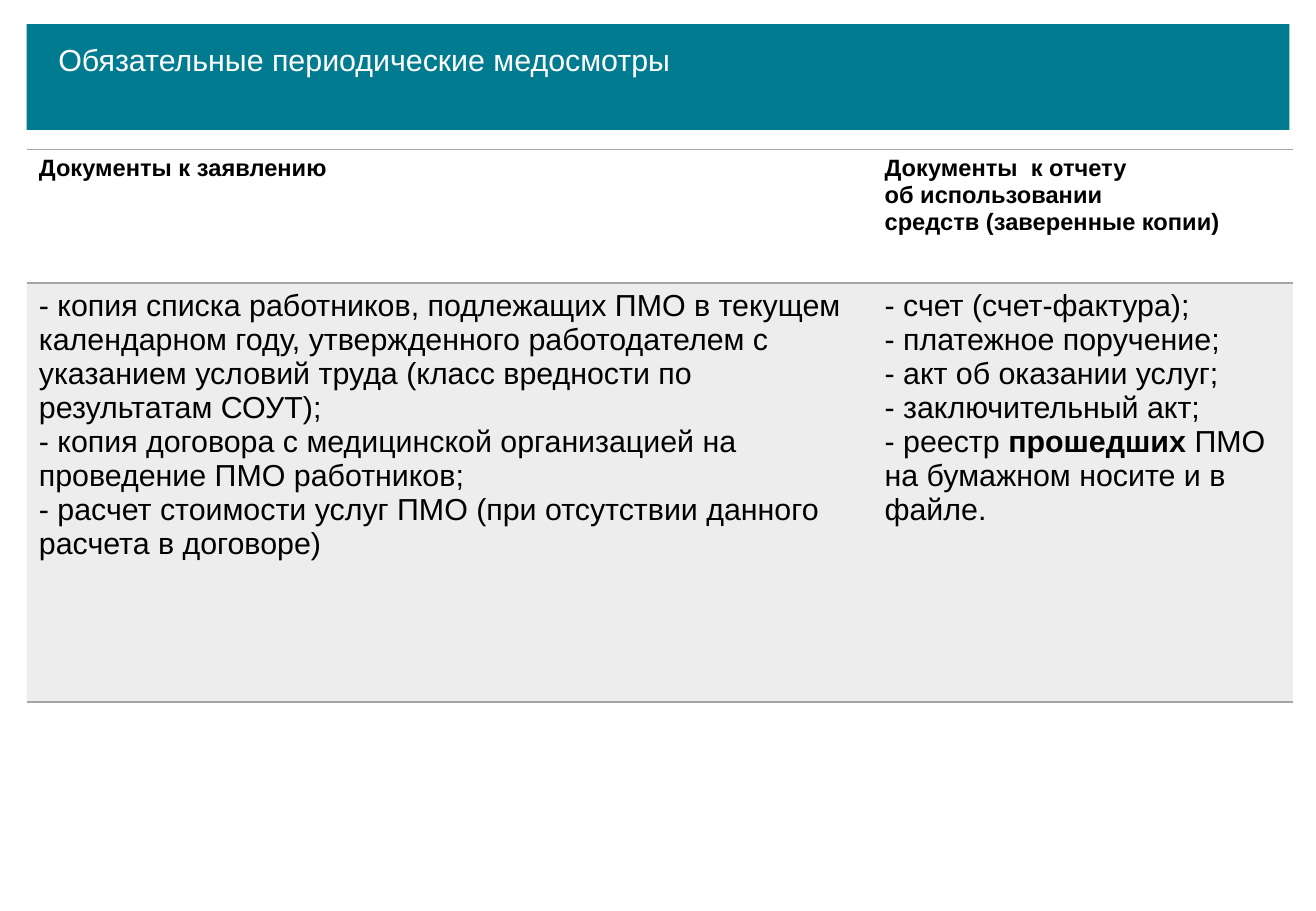
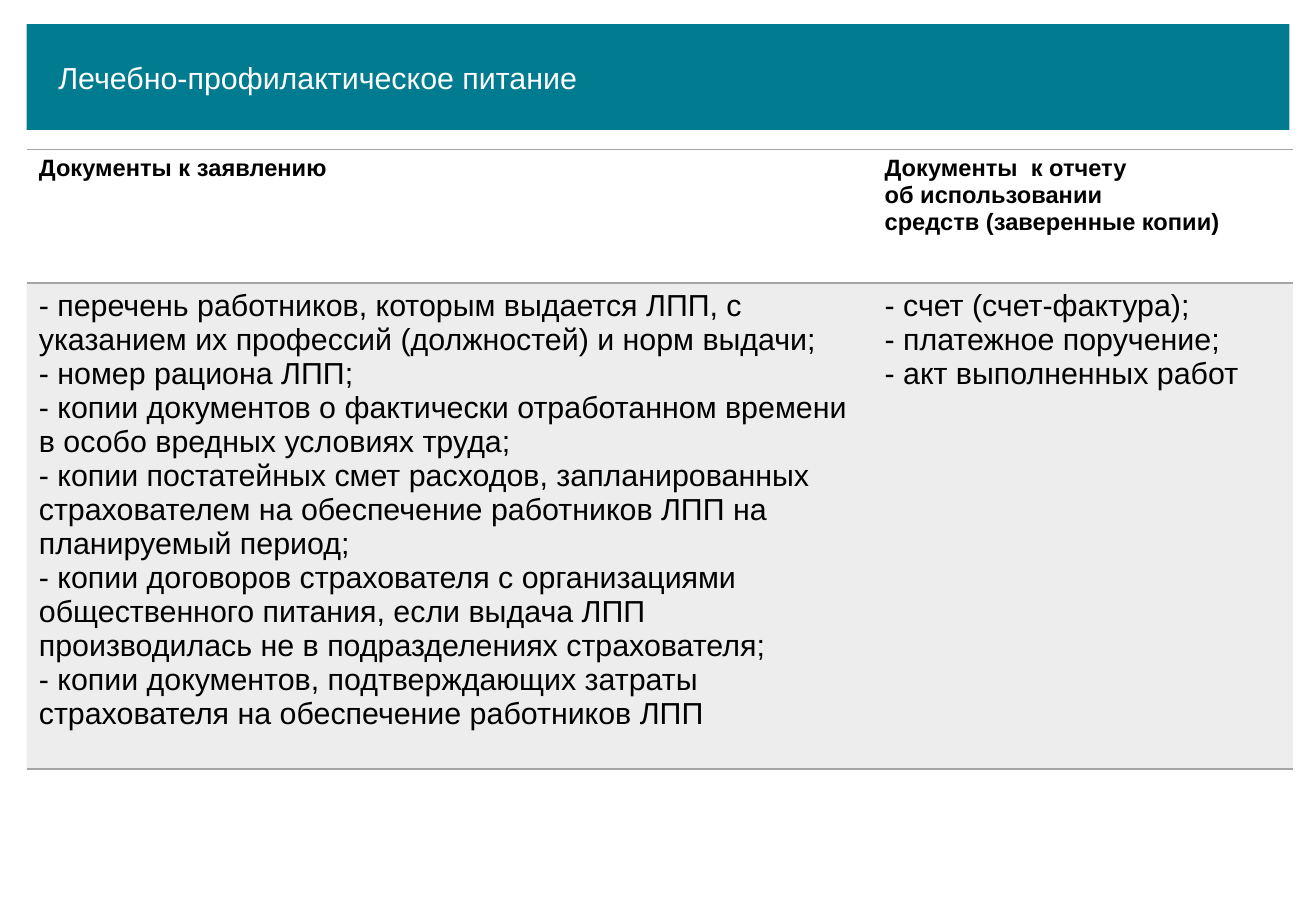
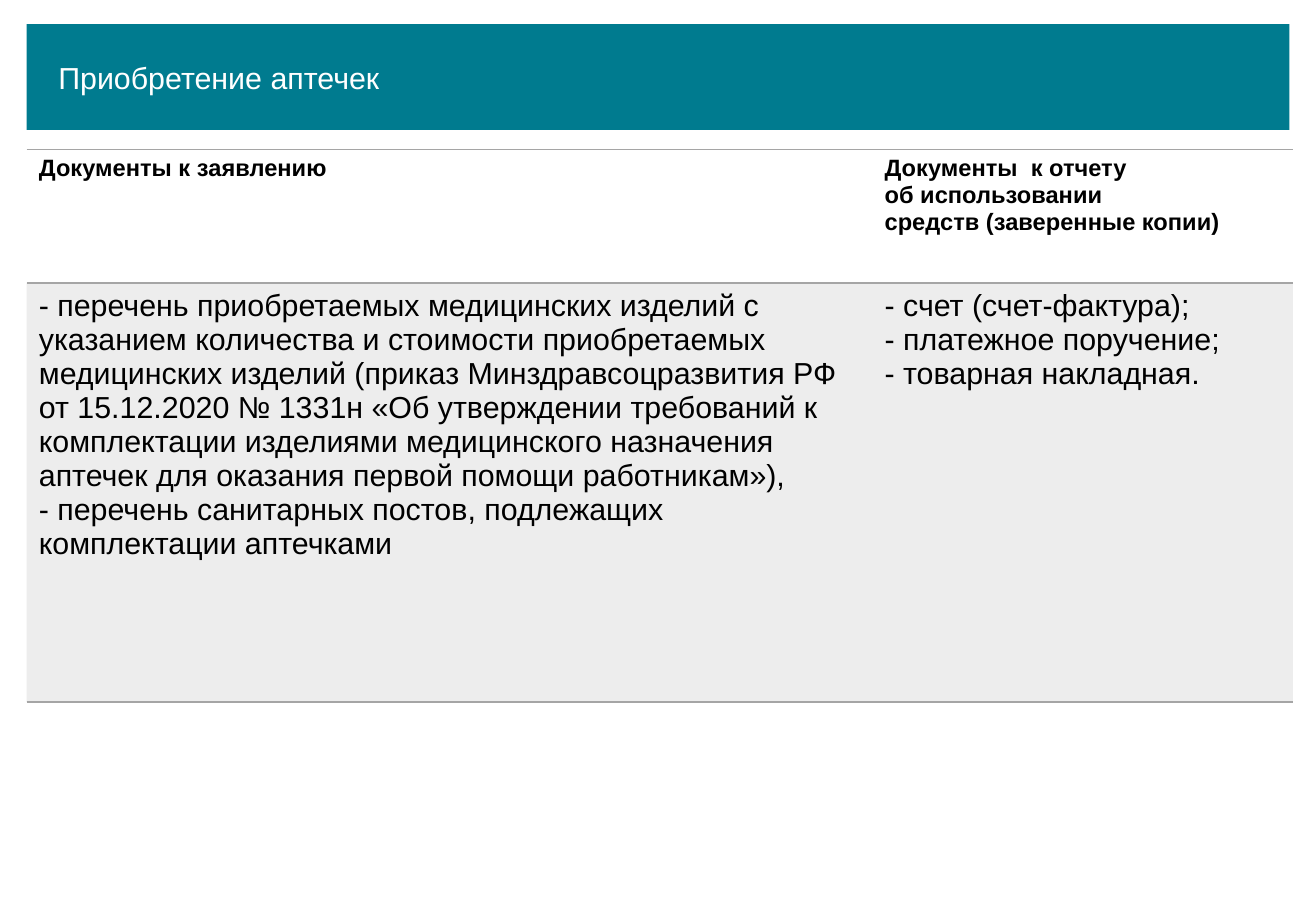
import pptx
import pptx.dml.color
import pptx.enum.shapes
import pptx.enum.text
import pptx.oxml
import pptx.oxml.ns
import pptx.util

Inches = pptx.util.Inches
Pt = pptx.util.Pt
qn = pptx.oxml.ns.qn

# Shared style
FONT = "Arial"
TEAL, WHITE, BLACK, GRAY = "007B8F", "FFFFFF", "000000", "A5A5A5"
BAND = (0.22, 0.2, 10.39, 0.87)
TABLE_LEFT, TABLE_TOP = 0.22, 1.23
COLUMNS = (6.96, 3.46)
HEADER_HEIGHT = 1.1
PLAIN_STYLE = "{2D5ABB26-0587-4C30-8999-92F81FD0307C}"

HEADERS = (
    ["Документы к заявлению"],
    ["Документы  к отчету\nоб использовании", "средств (заверенные копии)"],
)
PAYMENT = ["- счет (счет-фактура);", "- платежное поручение;"]

# Text between ** marks is bold
TOPICS = [
    dict(
        title="Обязательные периодические медосмотры",
        title_box=(0.16, 0.09, 5.88, 0.71),
        body_height=3.45,
        application=[
            "- копия списка работников, подлежащих ПМО в текущем календарном году, "
            "утвержденного работодателем с указанием условий труда "
            "(класс вредности по результатам СОУТ);",
            "- копия договора с медицинской организацией на проведение ПМО работников;",
            "- расчет стоимости услуг ПМО (при отсутствии данного расчета в договоре)",
        ],
        report=PAYMENT + [
            "- акт об оказании услуг;",
            "- заключительный акт;",
            "- реестр **прошедших** ПМО на бумажном носите и в файле.",
        ],
    ),
    dict(
        title="Лечебно-профилактическое питание",
        title_box=(0.16, 0.24, 4.49, 0.71),
        body_height=4.0,
        application=[
            "- перечень работников, которым выдается ЛПП, с указанием их профессий "
            "(должностей) и норм выдачи;",
            "- номер рациона ЛПП;",
            "- копии документов о фактически отработанном времени "
            "в особо вредных условиях труда;",
            "- копии постатейных смет расходов, запланированных страхователем "
            "на обеспечение работников ЛПП на планируемый период;",
            "- копии договоров страхователя с организациями общественного питания, "
            "если выдача ЛПП производилась не в подразделениях страхователя;",
            "- копии документов, подтверждающих затраты страхователя "
            "на обеспечение работников ЛПП",
        ],
        report=PAYMENT + ["- акт выполненных работ"],
    ),
    dict(
        title="Приобретение аптечек",
        title_box=(0.16, 0.24, 4.49, 0.4),
        body_height=3.45,
        application=[
            "- перечень приобретаемых медицинских изделий с указанием количества "
            "и стоимости приобретаемых медицинских изделий (приказ "
            "Минздравсоцразвития РФ от 15.12.2020 № 1331н «Об утверждении требований "
            "к комплектации изделиями медицинского назначения аптечек для оказания "
            "первой помощи работникам»),",
            "- перечень санитарных постов, подлежащих комплектации аптечками",
        ],
        report=PAYMENT + ["- товарная накладная."],
    ),
]


def rgb(value):
    return pptx.dml.color.RGBColor.from_string(value)


def write(tf, paragraphs, size=18, color=BLACK, bold=False):
    """Fill a text frame, one paragraph per string."""
    tf.word_wrap = True
    for i, text in enumerate(paragraphs):
        p = tf.paragraphs[0] if i == 0 else tf.add_paragraph()
        p.alignment = pptx.enum.text.PP_ALIGN.LEFT
        for j, line in enumerate(text.split("\n")):
            if j:
                p.add_line_break()
            for k, part in enumerate(line.split("**")):
                r = p.add_run()
                r.text = part
                r.font.name = FONT
                r.font.size = Pt(size)
                r.font.bold = bold or k % 2 == 1
                r.font.color.rgb = rgb(color)


def add_border(cell, side):
    cell._tc.get_or_add_tcPr().append(pptx.oxml.parse_xml(
        f'<a:{side} {pptx.oxml.ns.nsdecls("a")} w="{Pt(1)}"><a:solidFill>'
        f'<a:srgbClr val="{GRAY}"/></a:solidFill></a:{side}>'))


def tint(cell, color, percent):
    cell.fill.solid()
    cell.fill.fore_color.rgb = rgb(color)
    clr = cell._tc.tcPr.find(qn("a:solidFill")).find(qn("a:srgbClr"))
    clr.append(pptx.oxml.parse_xml(
        f'<a:alpha {pptx.oxml.ns.nsdecls("a")} val="{percent * 1000}"/>'))


def add_title_band(s, box, title, title_box):
    """Teal band with the slide title placed relative to it."""
    sp = s.shapes.add_shape(pptx.enum.shapes.MSO_SHAPE.RECTANGLE, *map(Inches, box))
    sp.shadow.inherit = False
    sp.fill.solid()
    sp.fill.fore_color.rgb = rgb(TEAL)
    sp.line.fill.background()

    heading = s.shapes.title
    heading.element.addprevious(sp.element)  # band goes behind the title
    x, y, w, h = title_box
    heading.left, heading.top = Inches(box[0] + x), Inches(box[1] + y)
    heading.width, heading.height = Inches(w), Inches(h)
    tf = heading.text_frame
    tf.auto_size = pptx.enum.text.MSO_AUTO_SIZE.NONE
    tf.vertical_anchor = pptx.enum.text.MSO_ANCHOR.TOP
    write(tf, [title], color=WHITE)


def add_documents_table(s, left, top, body_height, columns):
    """Header row and one tinted row of document lists."""
    heights = (HEADER_HEIGHT, body_height)
    frame = s.shapes.add_table(2, len(COLUMNS), Inches(left), Inches(top),
                               Inches(sum(COLUMNS)), Inches(sum(heights)))
    frame.element.find(".//" + qn("a:tableStyleId")).text = PLAIN_STYLE
    table = frame.table
    table.first_row = table.horz_banding = False
    for row, height in zip(table.rows, heights):
        row.height = Inches(height)
    for i, width in enumerate(COLUMNS):
        table.columns[i].width = Inches(width)
        header, body = table.cell(0, i), table.cell(1, i)
        for cell in (header, body):
            add_border(cell, "lnT")
            add_border(cell, "lnB")
        header.fill.background()
        write(header.text_frame, HEADERS[i], size=14, bold=True)
        tint(body, GRAY, 20)
        write(body.text_frame, columns[i])


def add_topic_slide(prs, topic):
    s = prs.slides.add_slide(prs.slide_layouts[5])
    add_title_band(s, BAND, topic["title"], topic["title_box"])
    add_documents_table(s, TABLE_LEFT, TABLE_TOP, topic["body_height"],
                        (topic["application"], topic["report"]))


def main():
    prs = pptx.Presentation()
    prs.slide_width, prs.slide_height = Inches(10.83), Inches(7.5)
    for topic in TOPICS:
        add_topic_slide(prs, topic)
    prs.save("out.pptx")


if __name__ == "__main__":
    main()
